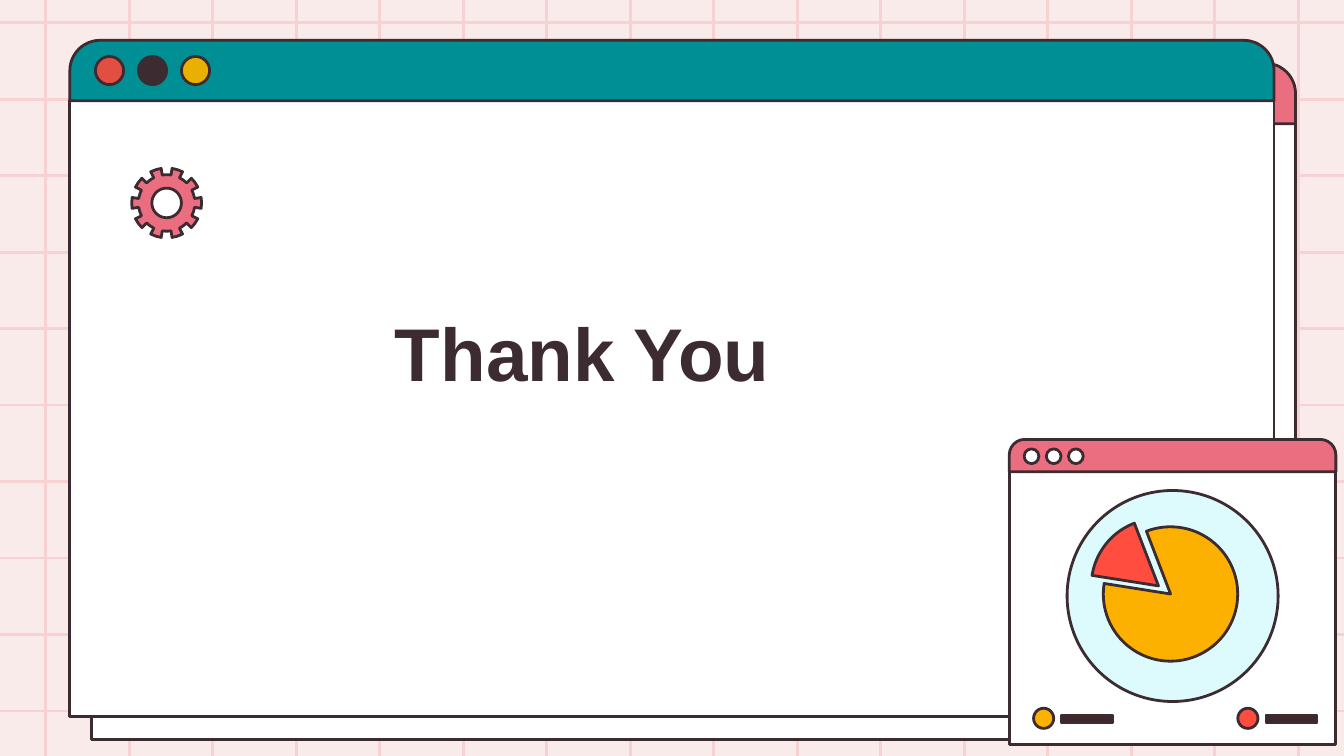
from math import cos, radians, sin

from lxml.etree import SubElement
from pptx import Presentation
from pptx.dml.color import RGBColor
from pptx.enum.shapes import MSO_CONNECTOR, MSO_SHAPE
from pptx.enum.text import MSO_ANCHOR, PP_ALIGN
from pptx.oxml.ns import qn
from pptx.util import Inches, Pt

COLORS = {
    "background": "FAEBEB",
    "grid": "F8D2D2",
    "outline": "3C2C31",
    "bar": "3E282C",
    "white": "FFFFFF",
    "pink": "EB6E80",
    "teal": "008F95",
    "brick": "E24E42",
    "mustard": "E9B000",
    "orange": "FCB100",
    "red": "FF4D3F",
    "ice": "DDFBFC",
}
WIDTH = 10
HEIGHT = WIDTH * 9 / 16

presentation = Presentation()
presentation.slide_width = Inches(WIDTH)
presentation.slide_height = Inches(HEIGHT)
slide = presentation.slides.add_slide(presentation.slide_layouts[6])
slide.background.fill.solid()
slide.background.fill.fore_color.rgb = RGBColor.from_string(COLORS["background"])


def paint(shape, fill):
    shape.shadow.inherit = False
    shape.fill.solid()
    shape.fill.fore_color.rgb = RGBColor.from_string(COLORS[fill])
    shape.line.color.rgb = RGBColor.from_string(COLORS["outline"])
    shape.line.width = Pt(1.5)


def add_part(kind, left, top, width, height, fill, adjustments=()):
    shape = slide.shapes.add_shape(
        kind, Inches(left), Inches(top), Inches(width), Inches(height)
    )
    for index, value in enumerate(adjustments):
        shape.adjustments[index] = value
    paint(shape, fill)


columns = [0.34 + 9.32 / 15 * index for index in range(16)]
rows = [0.17 + 5.12 / 9 * index for index in range(10)]
grid_lines = [(x, HEIGHT, x, 0) for x in columns] + [(0, y, WIDTH, y) for y in rows]
for ends in grid_lines:
    connector = slide.shapes.add_connector(
        MSO_CONNECTOR.STRAIGHT, *[Inches(value) for value in ends]
    )
    connector.line.color.rgb = RGBColor.from_string(COLORS["grid"])
    connector.line.width = Pt(1.5)
    SubElement(connector._element.spPr, qn("a:effectLst"))

for left, top, fill in [(0.68, 0.47, "pink"), (0.52, 0.3, "teal")]:
    add_part(MSO_SHAPE.RECTANGLE, left, top + 0.45, 8.96, 4.58, "white")
    add_part(MSO_SHAPE.ROUND_2_SAME_RECTANGLE, left, top, 8.96, 0.45, fill, [0.5, 0])

for index, fill in enumerate(["brick", "outline", "mustard"]):
    add_part(MSO_SHAPE.OVAL, 0.71 + 0.32 * index, 0.42, 0.21, 0.21, fill)

title = slide.shapes.add_textbox(Inches(2.84), Inches(1.42), Inches(4.32), Inches(1.63))
text_frame = title.text_frame
frame_format = {
    "word_wrap": True,
    "vertical_anchor": MSO_ANCHOR.BOTTOM,
    "margin_left": Inches(0.1),
    "margin_right": Inches(0.1),
    "margin_top": Inches(0.1),
    "margin_bottom": Inches(0.1),
}
for name, value in frame_format.items():
    setattr(text_frame, name, value)
paragraph = text_frame.paragraphs[0]
paragraph.alignment = PP_ALIGN.LEFT
run = paragraph.add_run()
run.text = "Thank You"
for name, value in {"name": "Arial", "size": Pt(40), "bold": True}.items():
    setattr(run.font, name, value)
run.font.color.rgb = RGBColor.from_string(COLORS["outline"])

add_part(MSO_SHAPE.RECTANGLE, 7.51, 3.51, 2.43, 2.03, "white")
for left, fill in [(7.69, "orange"), (9.21, "red")]:
    add_part(MSO_SHAPE.RECTANGLE, left + 0.21, 5.32, 0.38, 0.06, "bar")
    add_part(MSO_SHAPE.OVAL, left, 5.27, 0.15, 0.15, fill)
add_part(MSO_SHAPE.ROUND_2_SAME_RECTANGLE, 7.51, 3.27, 2.43, 0.24, "pink", [0.48, 0])
for index in range(3):
    add_part(MSO_SHAPE.OVAL, 7.62 + 0.33 / 2 * index, 3.34, 0.11, 0.11, "white")

add_part(MSO_SHAPE.OVAL, 7.94, 3.65, 1.57, 1.57, "ice")
slice_start, slice_end = 189 * 0.6, 249 * 0.6
add_part(MSO_SHAPE.PIE, 8.21, 3.92, 1, 1, "orange", [slice_end, slice_start])
add_part(MSO_SHAPE.PIE, 8.12, 3.86, 1, 1, "red", [slice_start, slice_end])

tooth = [(-9, 0.21), (-9, 0.26), (0, 0.26), (9, 0.26), (9, 0.21), (15, 0.21), (21, 0.21)]
rim = [(36 * index + angle, radius) for index in range(10) for angle, radius in tooth]
hole = [(-angle, 0.11) for angle in range(0, 360, 10)]
rim_points, hole_points = [
    [
        (Inches(1.24 + radius * cos(radians(angle))), Inches(1.51 + radius * sin(radians(angle))))
        for angle, radius in contour
    ]
    for contour in (rim, hole)
]
builder = slide.shapes.build_freeform(*rim_points[0])
builder.add_line_segments(rim_points[1:], close=True)
builder.move_to(*hole_points[0])
builder.add_line_segments(hole_points[1:], close=True)
paint(builder.convert_to_shape(), "pink")

presentation.save("out.pptx")
